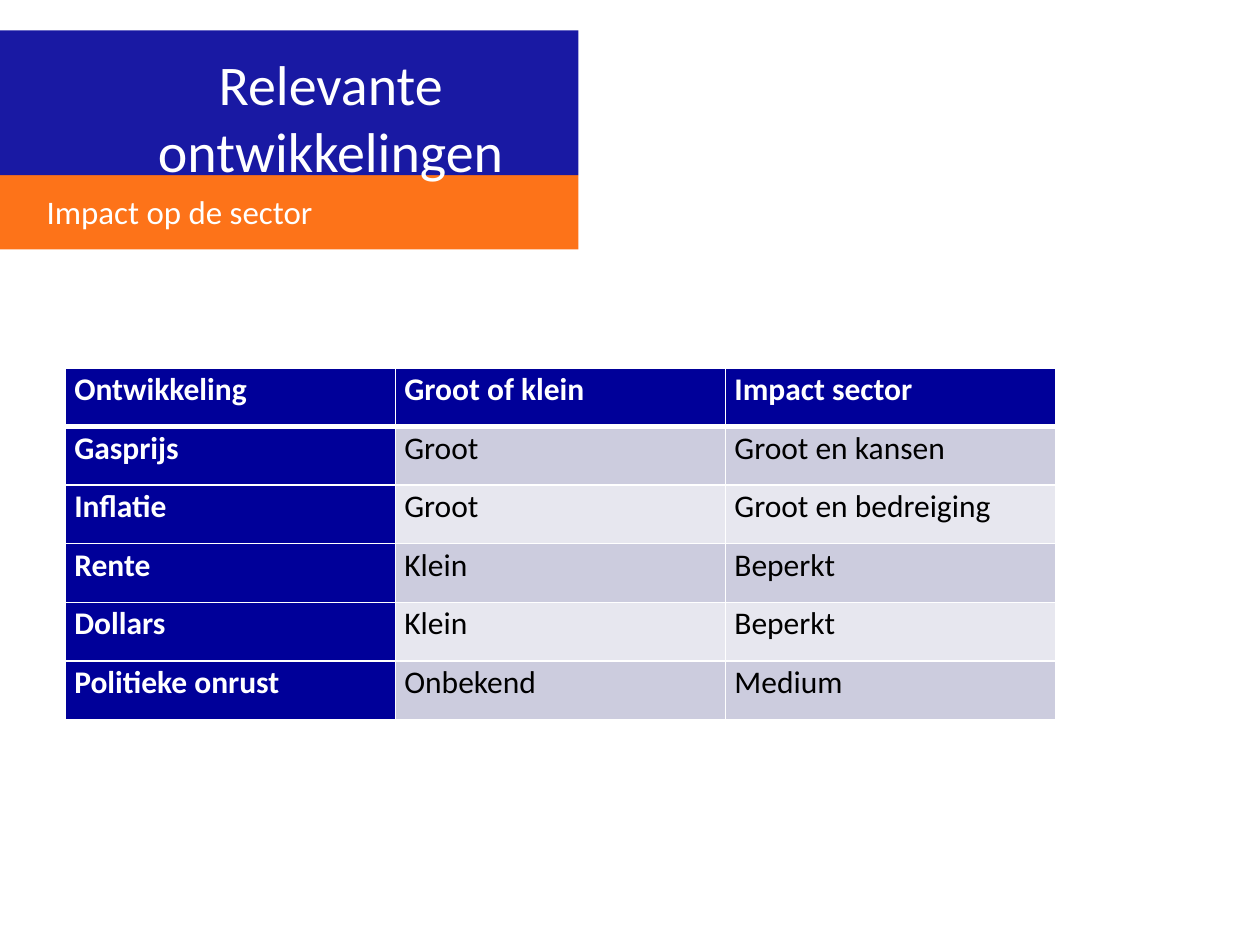
from lxml import etree
from pptx import Presentation
from pptx.dml.color import RGBColor
from pptx.enum.shapes import MSO_SHAPE
from pptx.enum.text import MSO_ANCHOR, PP_ALIGN
from pptx.oxml.ns import qn
from pptx.util import Inches, Pt

RECTANGLE = MSO_SHAPE.RECTANGLE
TOP, MIDDLE = MSO_ANCHOR.TOP, MSO_ANCHOR.MIDDLE
LEFT, CENTER = PP_ALIGN.LEFT, PP_ALIGN.CENTER

FONT = "Calibri"
NAVY, ORANGE, WHITE, BLACK = "000099", "FD6400", "FFFFFF", "000000"
BANDS = ("CCCCDE", "E7E7EF")

BANNER_WIDTH = 4.59
TITLE_TOP, TITLE_HEIGHT = 0.24, 1.15
SUBTITLE_HEIGHT = 0.59
TABLE_LEFT, TABLE_TOP, TABLE_WIDTH, TABLE_HEIGHT = 0.52, 2.92, 7.86, 2.79

ROWS = [
    ("Ontwikkeling", "Groot of klein", "Impact sector"),
    ("Gasprijs", "Groot", "Groot en kansen"),
    ("Inflatie", "Groot", "Groot en bedreiging"),
    ("Rente", "Klein", "Beperkt"),
    ("Dollars", "Klein", "Beperkt"),
    ("Politieke onrust", "Onbekend", "Medium"),
]


def paint(fill, color, opacity=100):
    fill.solid()
    fill.fore_color.rgb = RGBColor.from_string(color)
    if opacity < 100:
        node = fill._xPr.find(f"{qn('a:solidFill')}/{qn('a:srgbClr')}")
        etree.SubElement(node, qn("a:alpha"), val=str(opacity * 1000))


def style_text(paragraph, size, color, bold=False):
    for run in paragraph.runs:
        run.font.name = FONT
        run.font.size = Pt(size)
        run.font.bold = bold
        run.font.color.rgb = RGBColor.from_string(color)


def set_margins(frame, left, top, right, bottom):
    frame.margin_left, frame.margin_top = Inches(left), Inches(top)
    frame.margin_right, frame.margin_bottom = Inches(right), Inches(bottom)


def add_banner(slide, text, top, height, color, size, margins, anchor, align):
    shape = slide.shapes.add_shape(
        RECTANGLE, 0, Inches(top), Inches(BANNER_WIDTH), Inches(height))
    shape.shadow.inherit = False
    shape.line.fill.background()
    paint(shape.fill, color, opacity=90)
    frame = shape.text_frame
    frame.word_wrap = True
    frame.vertical_anchor = anchor
    set_margins(frame, *margins)
    frame.text = text
    frame.paragraphs[0].alignment = align
    style_text(frame.paragraphs[0], size, WHITE)


def add_borders(cell, top, bottom):
    properties = cell._tc.get_or_add_tcPr()
    for side, width in (("L", 1), ("R", 1), ("T", top), ("B", bottom)):
        line = etree.SubElement(properties, qn(f"a:ln{side}"), w=str(Pt(width)))
        solid = etree.SubElement(line, qn("a:solidFill"))
        etree.SubElement(solid, qn("a:srgbClr"), val=WHITE)


def fill_cell(cell, text, row, column):
    is_heading = row == 0 or column == 0
    add_borders(cell, top=3 if row == 1 else 1, bottom=3 if row == 0 else 1)
    paint(cell.fill, NAVY if is_heading else BANDS[(row - 1) % 2])
    set_margins(cell, 0.07, 0, 0.07, 0)
    cell.text_frame.text = text
    paragraph = cell.text_frame.paragraphs[0]
    paragraph.line_spacing = 1.07
    paragraph.space_after = Pt(8)
    style_text(paragraph, 18, WHITE if is_heading else BLACK, is_heading)


def add_impact_table(slide):
    table = slide.shapes.add_table(
        len(ROWS), len(ROWS[0]), Inches(TABLE_LEFT), Inches(TABLE_TOP),
        Inches(TABLE_WIDTH), Inches(TABLE_HEIGHT)).table
    table.first_col = True
    for row, texts in enumerate(ROWS):
        for column, text in enumerate(texts):
            fill_cell(table.cell(row, column), text, row, column)


def main():
    presentation = Presentation()
    presentation.slide_width, presentation.slide_height = Inches(10), Inches(7.5)
    slide = presentation.slides.add_slide(presentation.slide_layouts[6])

    # Banner: the subtitle lies behind, as the title reaches over its edge
    add_banner(slide, "Impact op de sector", TITLE_TOP + TITLE_HEIGHT,
               SUBTITLE_HEIGHT, ORANGE, 18.8, (0.37, 0.1, 0.1, 0.12), MIDDLE, LEFT)
    add_banner(slide, "Relevante ontwikkelingen", TITLE_TOP, TITLE_HEIGHT,
               NAVY, 32, (0.78, 0.15, 0.12, 0.08), TOP, CENTER)

    # Developments and their impact
    add_impact_table(slide)

    presentation.save("out.pptx")


if __name__ == "__main__":
    main()
